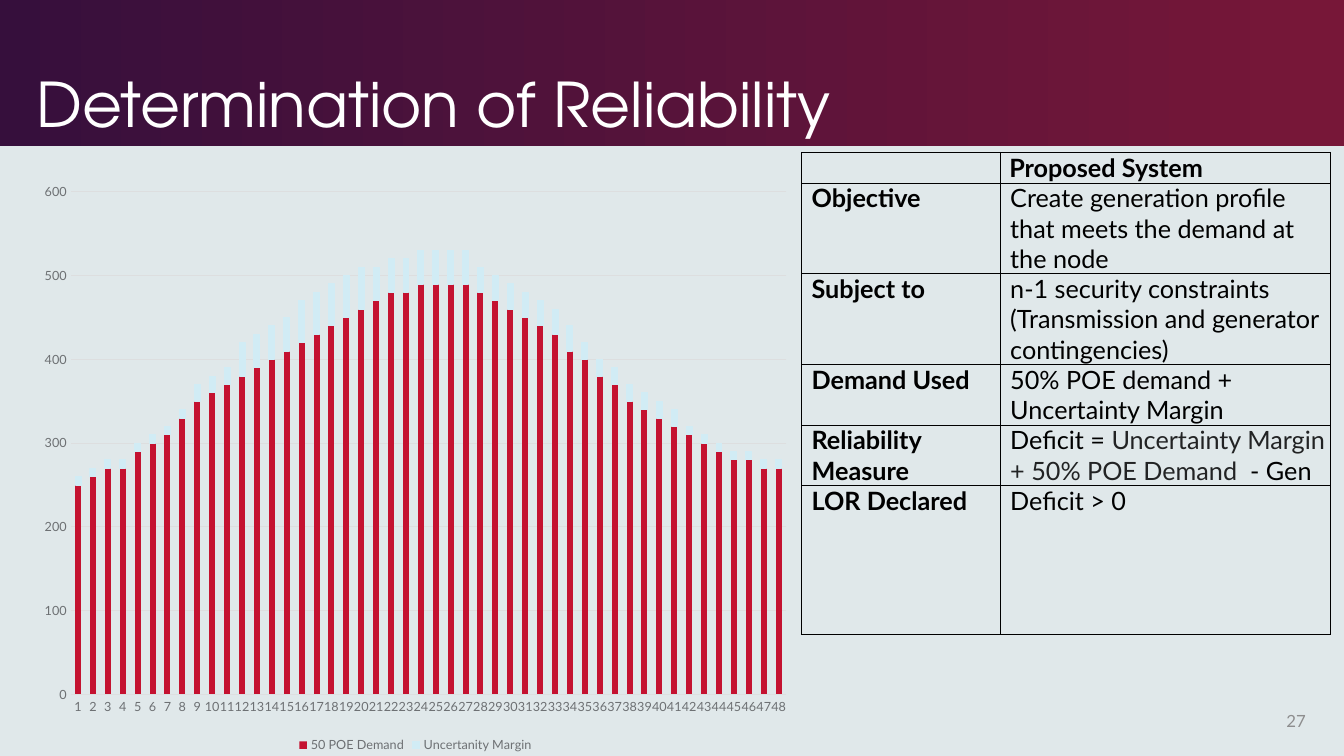
from dataclasses import dataclass

from lxml.etree import SubElement
from pptx import Presentation
from pptx.chart.data import CategoryChartData
from pptx.dml.color import RGBColor
from pptx.enum.chart import XL_CHART_TYPE as ChartType
from pptx.enum.chart import XL_LEGEND_POSITION as LegendPosition
from pptx.enum.chart import XL_TICK_MARK as TickMark
from pptx.enum.shapes import MSO_SHAPE as Preset
from pptx.enum.text import MSO_ANCHOR as Anchor
from pptx.enum.text import PP_ALIGN as Align
from pptx.oxml.ns import qn
from pptx.util import Inches, Pt

BODY_FONT, TITLE_FONT = "Lato", "TeX Gyre Adventor"
BLACK, INK, GREY, RULE = "000000", "222324", "6D7073", "DDDEDF"


@dataclass(frozen=True)
class Series:
    name: str
    color: str
    values: tuple[int, ...]
    outlined: bool = False


@dataclass(frozen=True)
class Span:
    text: str
    color: str = BLACK


@dataclass(frozen=True)
class Row:
    height: float
    label: str
    lines: tuple[tuple[Span, ...], ...]
    bold: bool = False
    indent: float = 0.1


SERIES = (
    Series("50 POE Demand", "C41230", (
        250, 260, 270, 270, 290, 300, 310, 330, 350, 360, 370, 380,
        390, 400, 410, 420, 430, 440, 450, 460, 470, 480, 480, 490,
        490, 490, 490, 480, 470, 460, 450, 440, 430, 410, 400, 380,
        370, 350, 340, 330, 320, 310, 300, 290, 280, 280, 270, 270)),
    Series("Uncertanity Margin", "D1ECF5", (
        10, 10, 10, 10, 10, 10, 10, 10, 20, 20, 20, 40,
        40, 40, 40, 50, 50, 50, 50, 50, 40, 40, 40, 40,
        40, 40, 40, 30, 30, 30, 30, 30, 30, 30, 20, 20,
        20, 20, 20, 20, 20, 10, 10, 10, 10, 10, 10, 10), outlined=True),
)

ROWS = (
    Row(0.28, "", ((Span("Proposed System"),),), bold=True, indent=0.09),
    Row(0.55, "Objective",
        ((Span("Create generation profile that meets the demand at the node"),),)),
    Row(0.55, "Subject to",
        ((Span("n-1 security constraints"),),
         (Span("(Transmission and generator contingencies)"),))),
    Row(0.55, "Demand Used", ((Span("50% POE demand + Uncertainty Margin"),),)),
    Row(0.55, "Reliability Measure",
        ((Span("Deficit = "), Span("Uncertainty Margin + 50% POE Demand ", INK),
          Span(" - Gen")),)),
    Row(1.48, "LOR Declared", ((Span("Deficit > 0"),),)),
)
COLUMN_WIDTHS = (1.97, 3.27)


def rgb(color: str) -> RGBColor:
    return RGBColor.from_string(color)


def set_format(target, **values) -> None:
    for name, value in values.items():
        setattr(target, name, value)


def set_font(font, size: float, color: str, name: str = BODY_FONT, bold: bool = False) -> None:
    set_format(font, size=Pt(size), name=name, bold=bold)
    font.color.rgb = rgb(color)


def set_line(line, color: str) -> None:
    line.width = Pt(0.75)
    line.color.rgb = rgb(color)


def add_band(page) -> None:
    band = page.shapes.add_shape(Preset.RECTANGLE, 0, 0, Inches(13.33), Inches(1.45))
    band.shadow.inherit = False
    band.line.fill.background()
    band.fill.gradient()
    band.fill.gradient_angle = 0
    for stop, position, color in zip(band.fill.gradient_stops, (0, 0.99), ("360F3C", "771738")):
        stop.position = position
        stop.color.rgb = rgb(color)
    page.shapes.title.element.addprevious(band.element)


def fill_title(title) -> None:
    set_format(title, left=Inches(0.26), top=Inches(0.15),
               width=Inches(9.85), height=Inches(1.3))
    frame = title.text_frame
    set_format(frame, vertical_anchor=Anchor.BOTTOM, word_wrap=True)
    para = frame.paragraphs[0]
    set_format(para, alignment=Align.LEFT, line_spacing=0.9)
    span = para.add_run()
    span.text = "Determination of Reliability"
    set_font(span.font, 44, "FFFFFF", TITLE_FONT)


def add_demand_chart(page) -> None:
    data = CategoryChartData()
    data.categories = [str(period) for period in range(1, 49)]
    for series in SERIES:
        data.add_series(series.name, series.values)
    chart = page.shapes.add_chart(
        ChartType.COLUMN_STACKED, Inches(0.29), Inches(1.71),
        Inches(7.66), Inches(5.8), data).chart
    set_font(chart.font, 10, INK)
    set_format(chart, has_title=False, has_legend=True)
    set_format(chart.legend, position=LegendPosition.BOTTOM, include_in_layout=False)
    set_font(chart.legend.font, 9, GREY)

    plot = chart.plots[0]
    set_format(plot, gap_width=150, overlap=100, vary_by_categories=False)
    for bars, series in zip(plot.series, SERIES):
        bars.format.fill.solid()
        bars.format.fill.fore_color.rgb = rgb(series.color)
        if series.outlined:
            set_line(bars.format.line, series.color)

    periods, demand = chart.category_axis, chart.value_axis
    for axis in (periods, demand):
        set_format(axis, major_tick_mark=TickMark.NONE, minor_tick_mark=TickMark.NONE)
        set_font(axis.tick_labels.font, 9, GREY)
    set_line(periods.format.line, RULE)
    labels_body = periods._element.find(qn("c:txPr")).find(qn("a:bodyPr"))
    labels_body.set("rot", "-60000000")
    set_format(demand, minimum_scale=0, maximum_scale=600, major_unit=100,
               has_major_gridlines=True)
    set_format(demand.tick_labels, number_format="0", number_format_is_linked=False)
    demand.format.line.fill.background()
    set_line(demand.major_gridlines.format.line, RULE)


def add_borders(cell) -> None:
    properties = cell._tc.get_or_add_tcPr()
    for side in ("a:lnL", "a:lnR", "a:lnT", "a:lnB"):
        border = SubElement(properties, qn(side), w=str(Pt(0.5)))
        fill = SubElement(border, qn("a:solidFill"))
        SubElement(fill, qn("a:srgbClr"), val=BLACK)


def fill_cell(cell, lines: tuple[tuple[Span, ...], ...], bold: bool, indent: float) -> None:
    set_format(cell, margin_left=0, margin_right=0, margin_top=0, margin_bottom=0)
    add_borders(cell)
    cell.fill.background()
    para = cell.text_frame.paragraphs[0]
    para._p.get_or_add_pPr().set("marL", str(Inches(indent)))
    for number, line in enumerate(lines):
        if number:
            para.add_line_break()
        for part in line:
            span = para.add_run()
            span.text = part.text
            set_font(span.font, 18, part.color, bold=bold)


def add_system_table(page) -> None:
    table = page.shapes.add_table(
        len(ROWS), len(COLUMN_WIDTHS), Inches(7.95), Inches(1.51),
        Inches(sum(COLUMN_WIDTHS)), Inches(sum(row.height for row in ROWS))).table
    set_format(table, first_row=False, horz_banding=False)
    for column, width in zip(table.columns, COLUMN_WIDTHS):
        column.width = Inches(width)
    for number, row in enumerate(ROWS):
        table.rows[number].height = Inches(row.height)
        label = ((Span(row.label),),) if row.label else ()
        fill_cell(table.cell(number, 0), label, True, row.indent)
        fill_cell(table.cell(number, 1), row.lines, row.bold, row.indent)
    table.cell(0, 1).vertical_anchor = Anchor.BOTTOM


def add_page_number(page) -> None:
    box = page.shapes.add_textbox(Inches(12.42), Inches(6.95), Inches(0.63), Inches(0.4))
    set_format(box.text_frame, word_wrap=True, vertical_anchor=Anchor.MIDDLE)
    para = box.text_frame.paragraphs[0]
    para.alignment = Align.RIGHT
    span = para.add_run()
    span.text = "27"
    set_font(span.font, 12, "8D8D8E")


def main() -> None:
    deck = Presentation()
    set_format(deck, slide_width=Inches(13.33), slide_height=Inches(7.5))
    page = deck.slides.add_slide(deck.slide_layouts[5])
    page.background.fill.solid()
    page.background.fill.fore_color.rgb = rgb("E0E8EA")
    add_band(page)
    fill_title(page.shapes.title)
    add_demand_chart(page)
    add_system_table(page)
    add_page_number(page)
    deck.save("out.pptx")


if __name__ == "__main__":
    main()
